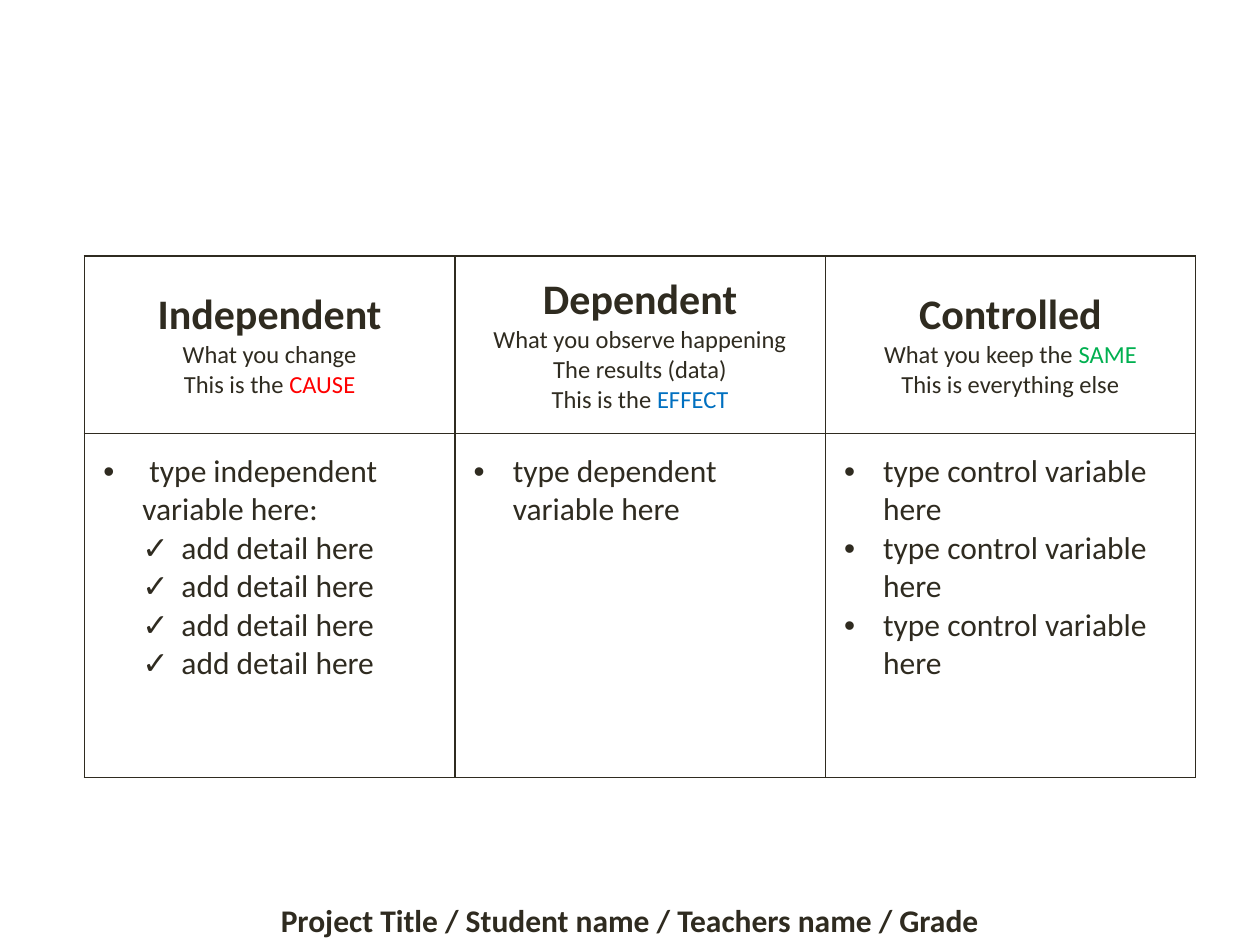
from lxml.etree import SubElement
from pptx import Presentation
from pptx.dml.color import RGBColor
from pptx.enum.text import MSO_ANCHOR, MSO_AUTO_SIZE, PP_ALIGN
from pptx.oxml import parse_xml
from pptx.oxml.ns import nsdecls, qn
from pptx.util import Inches, Pt

INK = RGBColor(0x2F, 0x2B, 0x20)
WHITE = RGBColor(0xFF, 0xFF, 0xFF)
RED = RGBColor(0xFF, 0x00, 0x00)
BLUE = RGBColor(0x00, 0x70, 0xC0)
GREEN = RGBColor(0x00, 0xB0, 0x50)

HEADING = {"size": Pt(24), "bold": True}
SUBTITLE = {"size": Pt(14), "bold": False}
ENTRY = {"size": Pt(18), "bold": False}
FOOTER = {"size": Pt(18), "bold": True}

HEADER_CELL = {"vertical_anchor": MSO_ANCHOR.MIDDLE}
ENTRY_CELL = {f"margin_{side}": Inches(0.15) for side in ("left", "right", "top", "bottom")}
PLAIN_TABLE = {"first_row": False, "horz_banding": False}

INDENT = 0.31
BULLETS = ("•", "✓")
COLUMN_WIDTH = 2.94
ROW_HEIGHTS = (1.41, 2.73)

VARIABLES = [
    {
        "heading": "Independent",
        "subtitles": [[("What you change", INK)], [("This is the ", INK), ("CAUSE", RED)]],
        "entries": [(" type independent variable here:", 0)] + [("add detail here", 1)] * 4,
    },
    {
        "heading": "Dependent",
        "subtitles": [
            [("What you observe happening", INK)],
            [("The results (data)", INK)],
            [("This is the ", INK), ("EFFECT", BLUE)],
        ],
        "entries": [("type dependent variable here", 0)],
    },
    {
        "heading": "Controlled",
        "subtitles": [[("What you keep the ", INK), ("SAME", GREEN)], [("This is everything else", INK)]],
        "entries": [("type control variable here", 0)] * 3,
    },
]


def apply_format(target, values):
    """Set every attribute in values on target."""
    for attribute, value in values.items():
        setattr(target, attribute, value)


def add_line(frame, parts, style, alignment=PP_ALIGN.LEFT):
    """Write coloured parts as the next paragraph of a text frame."""
    line = frame.paragraphs[0]
    if line.runs:
        line = frame.add_paragraph()
    line.alignment = alignment
    for wording, color in parts:
        run = line.add_run()
        run.text = wording
        apply_format(run.font, {"name": "Calibri", **style})
        run.font.color.rgb = color
    return line


def add_bullet(line, level):
    """Give a paragraph the bullet and hanging indent of its level."""
    properties = line._p.get_or_add_pPr()
    properties.set("marL", str(Inches(INDENT * (level + 1))))
    properties.set("indent", str(-Inches(INDENT)))
    SubElement(properties, qn("a:buFont"), typeface="Arial")
    SubElement(properties, qn("a:buChar"), char=BULLETS[level])


def format_cell(cell, values):
    """Apply the cell format, a white fill and thin borders."""
    apply_format(cell, values)
    cell.fill.solid()
    cell.fill.fore_color.rgb = WHITE
    properties = cell._tc.get_or_add_tcPr()
    for position, side in enumerate("LRTB"):
        border = parse_xml(
            f'<a:ln{side} {nsdecls("a")} w="{Pt(1)}"><a:solidFill>'
            f'<a:srgbClr val="{INK}"/></a:solidFill></a:ln{side}>'
        )
        properties.insert(position, border)


def fill_variable(header, body, variable):
    """Fill the header and body cells of one variable."""
    format_cell(header, HEADER_CELL)
    add_line(header.text_frame, [(variable["heading"], INK)], HEADING, PP_ALIGN.CENTER)
    for parts in variable["subtitles"]:
        add_line(header.text_frame, parts, SUBTITLE, PP_ALIGN.CENTER)
    format_cell(body, ENTRY_CELL)
    for wording, level in variable["entries"]:
        add_bullet(add_line(body.text_frame, [(wording, INK)], ENTRY), level)


def add_variables_table(slide):
    """Add the table with one column for each variable."""
    count = len(VARIABLES)
    table = slide.shapes.add_table(
        len(ROW_HEIGHTS), count, Inches(0.67), Inches(2.03),
        Inches(COLUMN_WIDTH * count), Inches(sum(ROW_HEIGHTS)),
    ).table
    apply_format(table, PLAIN_TABLE)
    for row, height in zip(table.rows, ROW_HEIGHTS):
        row.height = Inches(height)
    for index, variable in enumerate(VARIABLES):
        table.columns[index].width = Inches(COLUMN_WIDTH)
        fill_variable(table.cell(0, index), table.cell(1, index), variable)


def add_footer(slide):
    """Add the project line along the bottom edge."""
    frame = slide.shapes.add_textbox(Inches(0), Inches(7.1), Inches(10), Inches(0.4)).text_frame
    apply_format(frame, {"word_wrap": True, "auto_size": MSO_AUTO_SIZE.SHAPE_TO_FIT_TEXT})
    project = "Project Title / Student name / Teachers name / Grade"
    add_line(frame, [(project, INK)], FOOTER, PP_ALIGN.CENTER)


def main():
    """Build and save the variables slide."""
    presentation = Presentation()
    apply_format(presentation, {"slide_width": Inches(10), "slide_height": Inches(7.5)})
    slide = presentation.slides.add_slide(presentation.slide_layouts[6])
    add_footer(slide)
    add_variables_table(slide)
    presentation.save("out.pptx")


if __name__ == "__main__":
    main()
